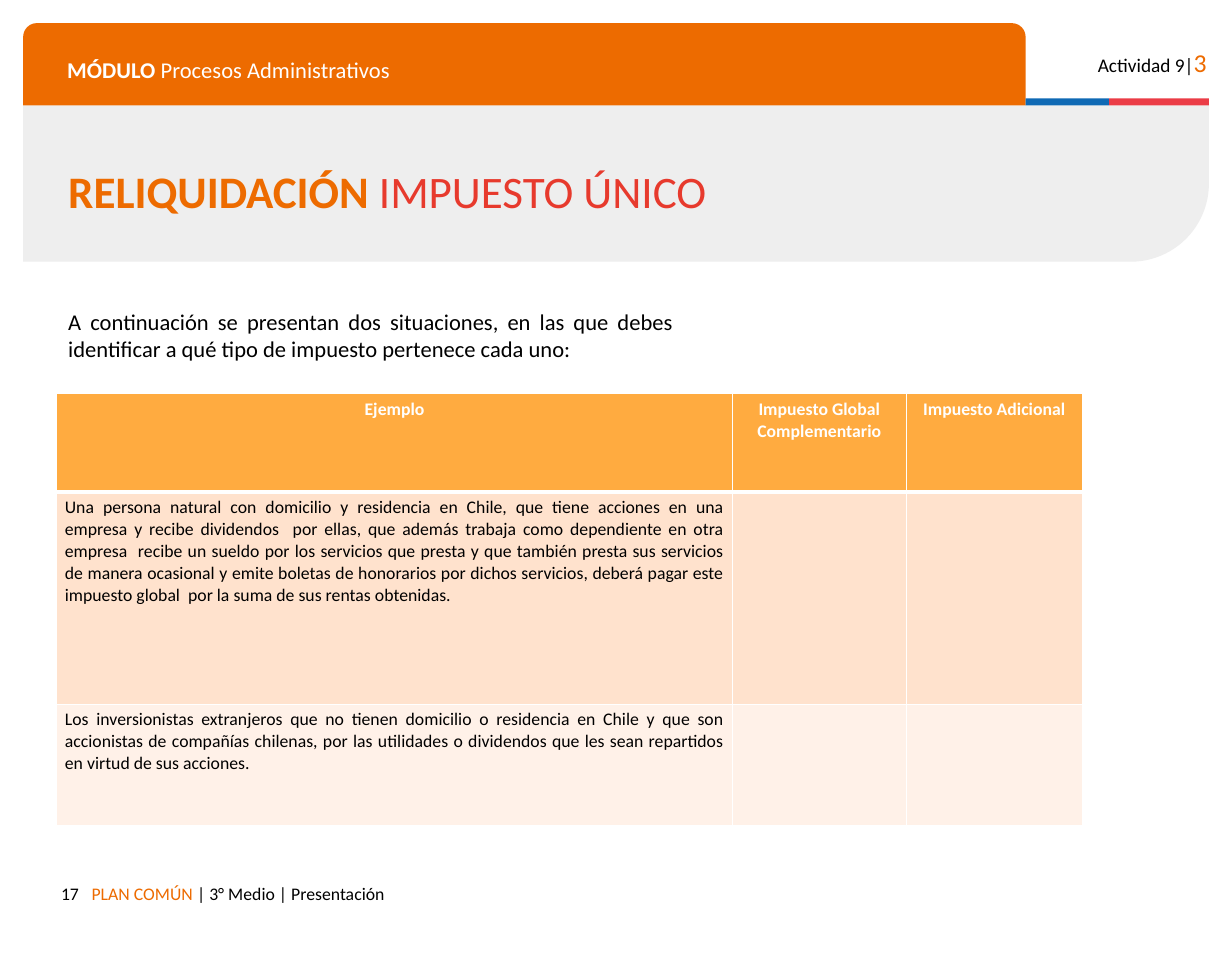
from dataclasses import dataclass

from lxml.etree import SubElement
from pptx import Presentation
from pptx.dml.color import RGBColor
from pptx.enum.shapes import MSO_SHAPE as Shape
from pptx.enum.text import MSO_ANCHOR as Anchor, PP_ALIGN as Align
from pptx.oxml.ns import qn
from pptx.util import Inches, Pt

WIDTH, HEIGHT = Inches(10.63), Inches(8.27)
ORANGE, RED, BLACK, WHITE = "ED6B00", "E73A2D", "000000", "FFFFFF"


@dataclass(frozen=True)
class Box:
    """Place and size in percent of the slide's width and height."""
    left: float
    top: float
    width: float
    height: float

    def emu(self) -> tuple[int, int, int, int]:
        return (share_x(self.left), share_y(self.top),
                share_x(self.width), share_y(self.height))


@dataclass(frozen=True)
class Band:
    box: Box
    kind: Shape
    fill: str
    adjustments: tuple[float, ...] = ()
    round_bottom_right: bool = False


@dataclass(frozen=True)
class Run:
    text: str
    size: float
    color: str = BLACK
    bold: bool = False


@dataclass(frozen=True)
class Label:
    box: Box
    runs: tuple[Run, ...]
    align: Align = Align.LEFT
    anchor: Anchor = Anchor.TOP
    inset_left: float = 0.1
    inset_y: float = 0.1
    spacing: float = 1.0


BANDS = (
    Band(Box(1.88, 11, 96.24, 16.32), Shape.ROUND_1_RECTANGLE, "EEEEEE", (0.5,), True),
    Band(Box(1.88, 2.42, 81.37, 8.58), Shape.ROUND_2_SAME_RECTANGLE, ORANGE, (0.167, 0)),
    Band(Box(83.25, 10.28, 6.77, 0.73), Shape.RECTANGLE, "0F69B4"),
    Band(Box(90.02, 10.28, 8.1, 0.73), Shape.RECTANGLE, "EB3C46"),
)

LABELS = (
    Label(Box(86.83, 3.63, 12.04, 4.59),
          (Run("Actividad 9|", 12), Run("3", 16, ORANGE)), Align.RIGHT),
    Label(Box(4.52, 4.59, 76.58, 4.23),
          (Run("MÓDULO", 14, WHITE, True), Run(" Procesos Administrativos", 14, WHITE))),
    Label(Box(3.86, 91.05, 69.8, 4.59),
          (Run("PLAN COMÚN ", 11, ORANGE), Run("| 3° Medio | Presentación", 11)),
          inset_left=0.38),
    Label(Box(1.88, 91.05, 5.46, 3.51), (Run("17", 11),), Align.RIGHT),
    Label(Box(4.61, 18.26, 92.1, 4.23),
          (Run("RELIQUIDACIÓN ", 28, ORANGE, True), Run("IMPUESTO ÚNICO", 28, RED)),
          anchor=Anchor.MIDDLE, spacing=0.8),
    Label(Box(4.61, 31.56, 50.99, 6.89),
          (Run("A continuación se presentan dos situaciones, en las que debes identificar "
               "a qué tipo de impuesto pertenece cada uno:", 14),),
          Align.JUSTIFY, inset_y=0.05),
)

TABLE_LEFT, TABLE_TOP = 4.61, 41.11
COLUMNS = (54.84, 14.11, 14.3)
ROWS = (10.28, 22.13, 12.7)
ROW_FILLS = ("FFAB40", "FFE2CD", "FFF1E8")
CELLS = (
    ("Ejemplo", "Impuesto Global Complementario", "Impuesto Adicional"),
    ("Una persona natural con domicilio y residencia en Chile, que tiene acciones en una "
     "empresa y recibe dividendos  por ellas, que además trabaja como dependiente en otra "
     "empresa  recibe un sueldo por los servicios que presta y que también presta sus "
     "servicios de manera ocasional y emite boletas de honorarios por dichos servicios, "
     "deberá pagar este impuesto global  por la suma de sus rentas obtenidas.", "", ""),
    ("Los inversionistas extranjeros que no tienen domicilio o residencia en Chile y que "
     "son accionistas de compañías chilenas, por las utilidades o dividendos que les sean "
     "repartidos en virtud de sus acciones.", "", ""),
)


def share_x(percent: float) -> int:
    return round(WIDTH * percent / 100)


def share_y(percent: float) -> int:
    return round(HEIGHT * percent / 100)


def rgb(color: str) -> RGBColor:
    return RGBColor.from_string(color)


def set_values(target, values: dict) -> None:
    for name, value in values.items():
        setattr(target, name, value)


def paint(s, color: str) -> None:
    s.fill.solid()
    s.fill.fore_color.rgb = rgb(color)


def write_runs(p, runs: tuple[Run, ...], align: Align) -> None:
    p.alignment = align
    for run in runs:
        r = p.add_run()
        r.text = run.text
        set_values(r.font, {"name": "Calibri", "size": Pt(run.size), "bold": run.bold})
        r.font.color.rgb = rgb(run.color)


def add_band(slide, band: Band) -> None:
    s = slide.shapes.add_shape(band.kind, *band.box.emu())
    s.shadow.inherit = False
    s.line.fill.background()
    paint(s, band.fill)
    for i, value in enumerate(band.adjustments):
        s.adjustments[i] = value
    if band.round_bottom_right:
        s.rotation = 180
        s.element.spPr.find(qn("a:xfrm")).set("flipH", "1")


def add_label(slide, label: Label) -> None:
    tf = slide.shapes.add_textbox(*label.box.emu()).text_frame
    set_values(tf, {
        "word_wrap": True, "vertical_anchor": label.anchor,
        "margin_left": Inches(label.inset_left), "margin_right": Inches(0.1),
        "margin_top": Inches(label.inset_y), "margin_bottom": Inches(label.inset_y),
    })
    p = tf.paragraphs[0]
    p.line_spacing = label.spacing
    write_runs(p, label.runs, label.align)


def add_borders(cell, top: float, bottom: float) -> None:
    """Put white borders before the fill, as the cell's schema asks."""
    tc_pr = cell._tc.get_or_add_tcPr()
    for i, (side, width) in enumerate(
            (("L", 1), ("R", 1), ("T", top), ("B", bottom))):
        ln = SubElement(tc_pr, qn(f"a:ln{side}"), w=str(Pt(width)))
        SubElement(SubElement(ln, qn("a:solidFill")), qn("a:srgbClr"), val=WHITE)
        tc_pr.insert(i, ln)


def add_tax_table(slide) -> None:
    box = Box(TABLE_LEFT, TABLE_TOP, sum(COLUMNS), sum(ROWS))
    table = slide.shapes.add_table(len(ROWS), len(COLUMNS), *box.emu()).table
    for column, width in zip(table.columns, COLUMNS):
        column.width = share_x(width)
    for i, (row, height) in enumerate(zip(table.rows, ROWS)):
        row.height = share_y(height)
        header = i == 0
        for cell, text in zip(row.cells, CELLS[i]):
            set_values(cell, {
                "margin_left": Inches(0.07), "margin_right": Inches(0.07),
                "margin_top": Inches(0.04), "margin_bottom": Inches(0.04),
            })
            paint(cell, ROW_FILLS[i])
            add_borders(cell, 3 if i == 1 else 1, 3 if header else 1)
            if text:
                write_runs(cell.text_frame.paragraphs[0],
                           (Run(text, 11, WHITE if header else BLACK, header),),
                           Align.CENTER if header else Align.JUSTIFY)


def main() -> None:
    prs = Presentation()
    set_values(prs, {"slide_width": WIDTH, "slide_height": HEIGHT})
    slide = prs.slides.add_slide(prs.slide_layouts[6])
    for band in BANDS:
        add_band(slide, band)
    for label in LABELS:
        add_label(slide, label)
    add_tax_table(slide)
    prs.save("out.pptx")


if __name__ == "__main__":
    main()
